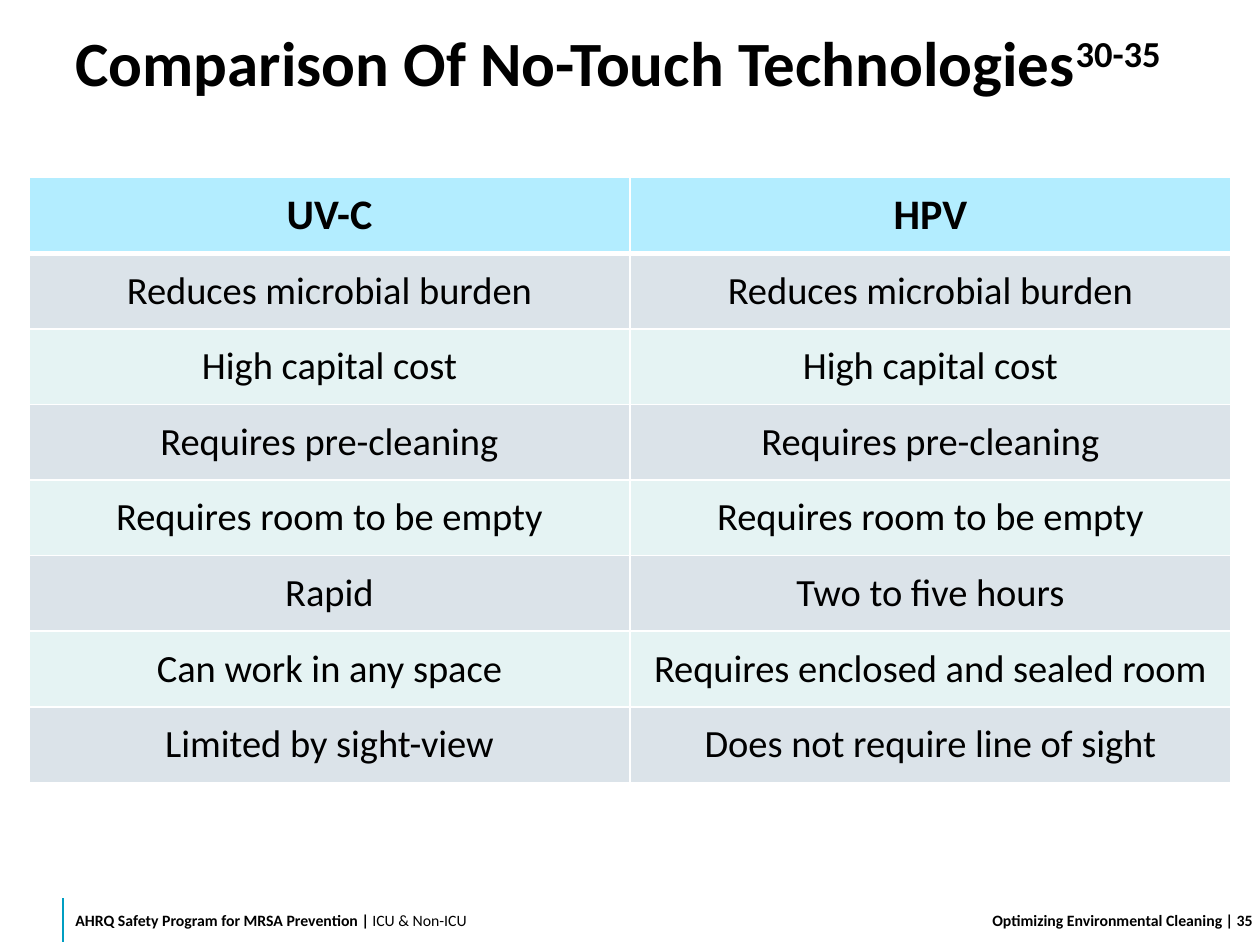
import pptx
import pptx.dml.color
import pptx.enum.shapes
import pptx.enum.text
import pptx.oxml
import pptx.oxml.ns
import pptx.util
from dataclasses import dataclass
from lxml import etree

ALIGN = pptx.enum.text.PP_ALIGN
MIDDLE = pptx.enum.text.MSO_ANCHOR.MIDDLE


@dataclass(frozen=True)
class Theme:
    font: str = "Calibri"
    text: str = "000000"
    accent: str = "009EC2"
    border: str = "FFFFFF"
    header: str = "B3EDFF"
    bands: tuple = ("DBE3E9", "E5F3F3")
    title_size: int = 36
    header_size: int = 24
    body_size: int = 22
    footer_size: int = 9


def color(value):
    return pptx.dml.color.RGBColor.from_string(value)


class SlideBuilder:
    """Places elements on a grid of 100 columns by 75 rows."""

    COLUMNS, ROWS = 100, 75

    def __init__(self, presentation, theme):
        self.theme = theme
        self.cell_width = presentation.slide_width / self.COLUMNS
        self.cell_height = presentation.slide_height / self.ROWS
        self.slide = presentation.slides.add_slide(presentation.slide_layouts[5])

    def box(self, left, top, width, height):
        return (round(left * self.cell_width), round(top * self.cell_height),
                round(width * self.cell_width), round(height * self.cell_height))

    def style(self, paragraph, size, bold=None, align=ALIGN.LEFT):
        paragraph.alignment = align
        font = paragraph.font
        font.name, font.size, font.bold = self.theme.font, pptx.util.Pt(size), bold
        font.color.rgb = color(self.theme.text)

    def frame(self, shape, insets):
        frame = shape.text_frame
        frame.word_wrap = True
        frame.auto_size = pptx.enum.text.MSO_AUTO_SIZE.NONE
        frame.vertical_anchor = MIDDLE
        (frame.margin_left, frame.margin_top,
         frame.margin_right, frame.margin_bottom) = map(pptx.util.Inches, insets)
        return frame

    def title(self, text, references, *area):
        shape = self.slide.shapes.title
        shape.left, shape.top, shape.width, shape.height = self.box(*area)
        paragraph = self.frame(shape, (0.1, 0.1, 0.1, 0.05)).paragraphs[0]
        paragraph.line_spacing = 0.9
        paragraph.add_run().text = text
        superscript = paragraph.add_run()
        superscript.text = references
        superscript.font._element.set("baseline", "30000")
        self.style(paragraph, self.theme.title_size, True)

    def footer(self, runs, area, insets, align=ALIGN.LEFT):
        shape = self.slide.shapes.add_textbox(*self.box(*area))
        paragraph = self.frame(shape, insets).paragraphs[0]
        self.style(paragraph, self.theme.footer_size, align=align)
        for text, bold in runs:
            run = paragraph.add_run()
            run.text, run.font.bold = text, bold

    def vertical_rule(self, column, top, bottom):
        left, start, _, length = self.box(column, top, 0, bottom - top)
        line = self.slide.shapes.add_connector(
            pptx.enum.shapes.MSO_CONNECTOR.STRAIGHT, left, start, left, start + length)
        line.line.color.rgb = color(self.theme.accent)
        line.line.width = pptx.util.Pt(1)
        etree.SubElement(line._element.spPr, pptx.oxml.ns.qn("a:effectLst"))

    def cell_borders(self, cell, top, bottom):
        properties = cell._tc.get_or_add_tcPr()
        for side, width in (("L", 1), ("R", 1), ("T", top), ("B", bottom)):
            properties.append(pptx.oxml.parse_xml(
                f'<a:ln{side} {pptx.oxml.ns.nsdecls("a")} w="{pptx.util.Pt(width)}">'
                f'<a:solidFill><a:srgbClr val="{self.theme.border}"/></a:solidFill>'
                f'</a:ln{side}>'))

    def table(self, rows, *area):
        graphic = self.slide.shapes.add_table(len(rows), len(rows[0]), *self.box(*area))
        for row_index, row in enumerate(rows):
            is_header = row_index == 0
            fill = self.theme.header if is_header else self.theme.bands[(row_index - 1) % 2]
            size = self.theme.header_size if is_header else self.theme.body_size
            for column_index, text in enumerate(row):
                cell = graphic.table.cell(row_index, column_index)
                # A thick border parts the header from the body
                self.cell_borders(cell, top=3 if row_index == 1 else 1,
                                  bottom=3 if is_header else 1)
                cell.fill.solid()
                cell.fill.fore_color.rgb = color(fill)
                cell.vertical_anchor = MIDDLE
                cell.text = text
                paragraph = cell.text_frame.paragraphs[0]
                self.style(paragraph, size, is_header, ALIGN.CENTER)
                if not is_header:
                    paragraph.space_after = pptx.util.Pt(16)


COMPARISON = [
    ("UV-C", "HPV"),
    ("Reduces microbial burden", "Reduces microbial burden"),
    ("High capital cost", "High capital cost"),
    ("Requires pre-cleaning", "Requires pre-cleaning"),
    ("Requires room to be empty", "Requires room to be empty"),
    ("Rapid", "Two to five hours"),
    ("Can work in any space", "Requires enclosed and sealed room"),
    ("Limited by sight-view", "Does not require line of sight"),
]


def main():
    presentation = pptx.Presentation()
    presentation.slide_width = pptx.util.Inches(10)
    presentation.slide_height = pptx.util.Inches(7.5)
    builder = SlideBuilder(presentation, Theme())

    # Title and comparison
    builder.title("Comparison Of No-Touch Technologies", "30-35", 5, 0, 90, 10)
    builder.table(COMPARISON, 2.3, 14.1, 95.4, 48)

    # Footer
    builder.vertical_rule(5, 71.3, 74.8)
    builder.footer([("AHRQ Safety Program for MRSA Prevention | ", True),
                    ("ICU & Non-ICU", False)],
                   (5, 71, 41, 4), (0.1, 0, 0.1, 0))
    builder.footer([("Optimizing Environmental Cleaning", True)],
                   (71, 71, 26, 4), (0.1, 0.05, 0, 0.05), ALIGN.RIGHT)
    builder.footer([(" | 35", True)], (97, 71, 3, 4), (0, 0.05, 0, 0.05))

    presentation.save("out.pptx")


if __name__ == "__main__":
    main()
